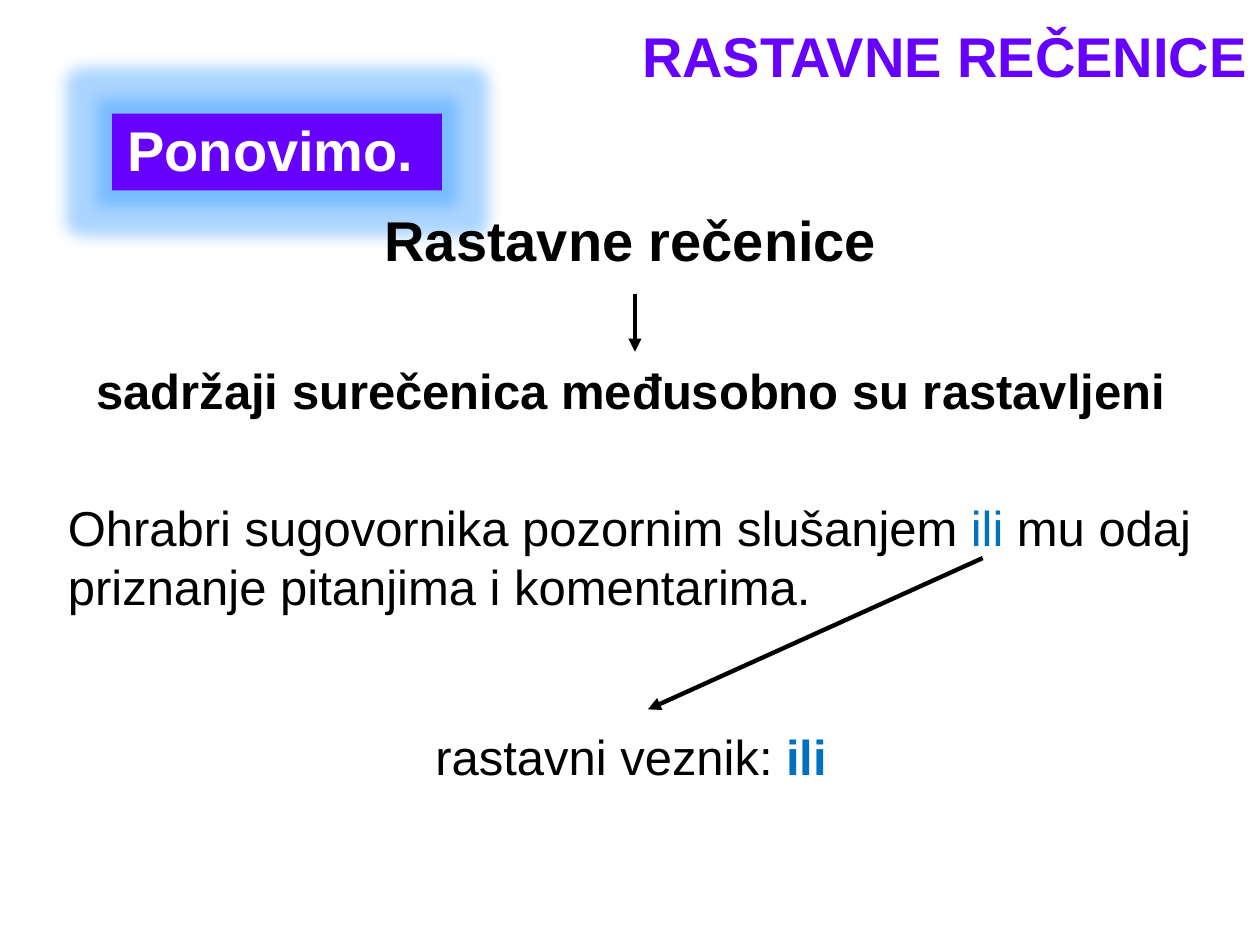
from lxml import etree
from pptx import Presentation
from pptx.dml.color import RGBColor
from pptx.enum.shapes import MSO_CONNECTOR, MSO_SHAPE
from pptx.enum.text import MSO_ANCHOR, PP_ALIGN
from pptx.oxml import parse_xml
from pptx.oxml.ns import qn
from pptx.util import Cm, Pt

LEFT, CENTER, RIGHT = PP_ALIGN.LEFT, PP_ALIGN.CENTER, PP_ALIGN.RIGHT
TOP, BOTTOM = MSO_ANCHOR.TOP, MSO_ANCHOR.BOTTOM
COLORS = {"violet": "6600FF", "white": "FFFFFF", "black": "000000",
          "blue": "0070C0", "glow": "2E97FF"}
FONT = "Arial"
A_NS = "http://schemas.openxmlformats.org/drawingml/2006/main"

# Content: boxes are left, top, width, height in cm; runs are text, colour, bold
TITLE = ((3.35, 0, 22.05, 1.93), 32, RIGHT, BOTTOM,
         [("RASTAVNE REČENICE", "violet", True)])
BADGE = (2.26, 2.29, 6.65, 1.55)
BADGE_TEXT = ((2.39, 1.65, 9.09, 2.13), 32, LEFT, BOTTOM,
              [("Ponovimo.", "white", True)])
TEXTS = [
    ((0.03, 4.01, 25.37, 1.63), 32, CENTER, TOP,
     [("Rastavne rečenice", "black", True)]),
    ((0.03, 7.14, 25.37, 1.93), 28, CENTER, TOP,
     [("sadržaji surečenica međusobno su rastavljeni", "black", True)]),
    ((1.12, 9.91, 25.37, 1.93), 28, LEFT, TOP,
     [("Ohrabri sugovornika pozornim slušanjem ", "black", False),
      ("ili", "blue", False),
      (" mu odaj priznanje pitanjima i komentarima.", "black", False)]),
    ((5.89, 14.53, 13.67, 1.93), 28, CENTER, TOP,
     [("rastavni veznik: ", "black", False), ("ili", "blue", True)]),
]
ARROWS = [(12.8, 5.92, 12.8, 7.09), (19.81, 11.25, 13.06, 14.3)]


def rgb(name):
    return RGBColor.from_string(COLORS[name])


def write(s, box, size, align, anchor, runs):
    s.left, s.top, s.width, s.height = map(Cm, box)
    tf = s.text_frame
    tf.word_wrap = True
    tf.vertical_anchor = anchor
    p = tf.paragraphs[0]
    p.alignment = align
    p.font.name, p.font.size = FONT, Pt(size)
    for text, color, bold in runs:
        r = p.add_run()
        r.text = text
        r.font.name, r.font.size = FONT, Pt(size)
        r.font.bold = bold
        r.font.color.rgb = rgb(color)
    return tf


def add_text(slide, item):
    return write(slide.shapes.add_textbox(0, 0, 0, 0), *item)


def add_arrow(slide, ends):
    s = slide.shapes.add_connector(MSO_CONNECTOR.STRAIGHT, *map(Cm, ends))
    s.line.color.rgb = rgb("black")
    s.line.width = Pt(2.5)
    etree.SubElement(s.line._get_or_add_ln(), qn("a:tailEnd"), type="triangle")
    etree.SubElement(s._element.spPr, qn("a:effectLst"))


def add_badge(slide):
    s = slide.shapes.add_shape(MSO_SHAPE.RECTANGLE, *map(Cm, BADGE))
    s.fill.solid()
    s.fill.fore_color.rgb = rgb("violet")
    s.line.fill.background()
    s._element.spPr.append(parse_xml(
        f'<a:effectLst xmlns:a="{A_NS}"><a:glow rad="{Cm(0.62)}">'
        f'<a:srgbClr val="{COLORS["glow"]}"><a:alpha val="40000"/></a:srgbClr>'
        '</a:glow></a:effectLst>'))


prs = Presentation()
prs.slide_width, prs.slide_height = Cm(25.4), Cm(19.05)
slide = prs.slides.add_slide(prs.slide_layouts[5])

# Badge with its label
add_badge(slide)
tf = add_text(slide, BADGE_TEXT)
tf.margin_left = tf.margin_right = Cm(0.18)
tf.margin_top = tf.margin_bottom = Cm(0.1)

# Title
tf = write(slide.shapes.title, *TITLE)
tf.paragraphs[0].line_spacing = 0.9

# Explanation and example
for item in TEXTS:
    add_text(slide, item)
for ends in ARROWS:
    add_arrow(slide, ends)

prs.save("out.pptx")
